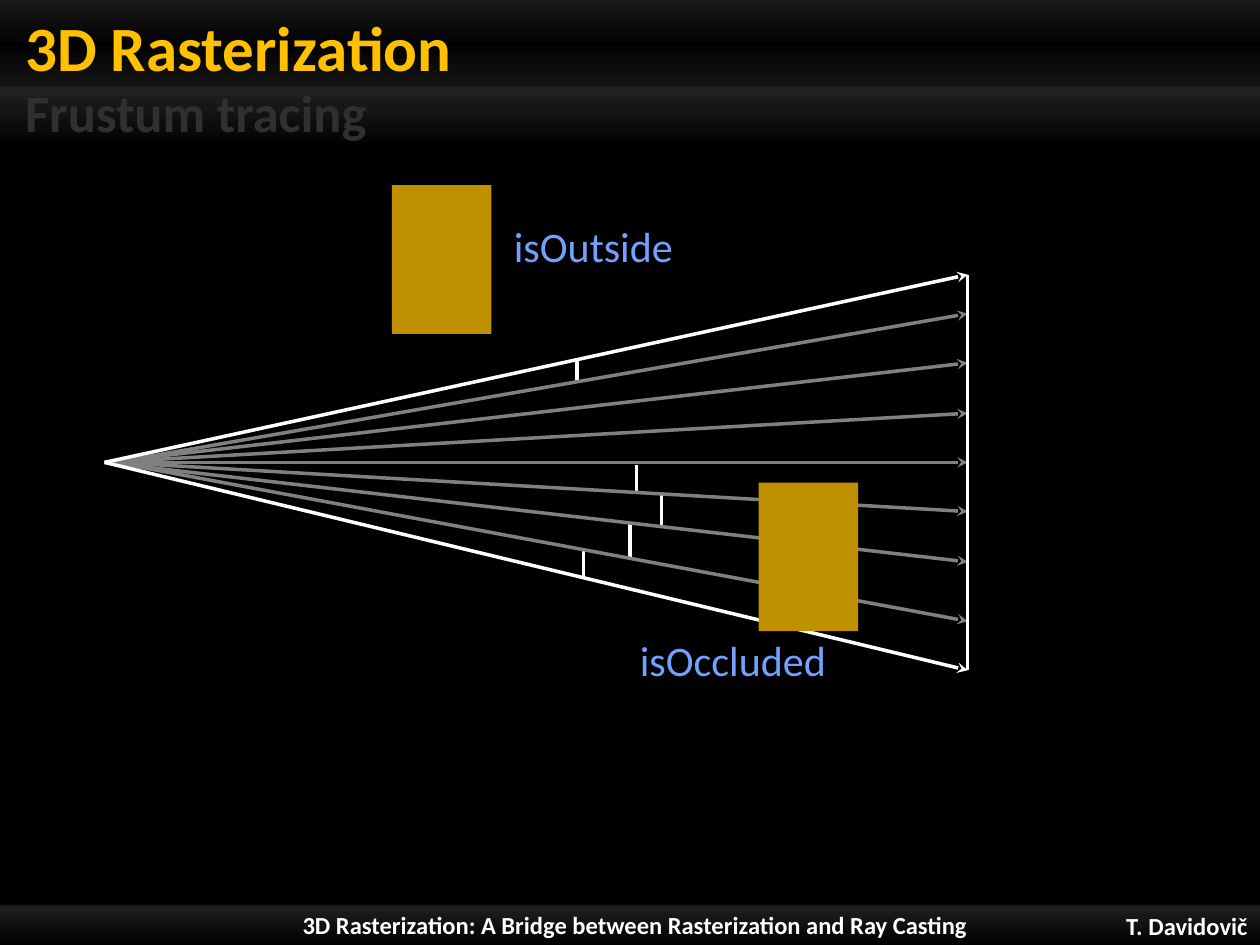
from lxml.etree import SubElement
from pptx import Presentation
from pptx.dml.color import RGBColor
from pptx.enum.shapes import MSO_CONNECTOR, MSO_SHAPE
from pptx.enum.text import MSO_ANCHOR, MSO_AUTO_SIZE, PP_ALIGN
from pptx.oxml.ns import qn
from pptx.util import Inches, Pt

BLACK = RGBColor(0x00, 0x00, 0x00)
WHITE = RGBColor(0xFF, 0xFF, 0xFF)
GRAY = RGBColor(0x80, 0x80, 0x80)
DARK_GRAY = RGBColor(0x30, 0x30, 0x30)
GOLD = RGBColor(0xFF, 0xC0, 0x00)
DARK_GOLD = RGBColor(0xBF, 0x90, 0x00)
BLUE = RGBColor(0x72, 0xA1, 0xFF)

EYE_X, EYE_Y = 0.83, 3.67
PLANE_X, PLANE_TOP, PLANE_BOTTOM = 7.68, 2.18, 5.32


class SlideBuilder:
    font = "Calibri"
    line_width = Pt(2)

    def __init__(self, slide):
        self.slide = slide
        slide.background.fill.solid()
        slide.background.fill.fore_color.rgb = BLACK

    def rect(self, x, y, w, h):
        sp = self.slide.shapes.add_shape(
            MSO_SHAPE.RECTANGLE, Inches(x), Inches(y), Inches(w), Inches(h))
        sp.shadow.inherit = False
        sp.line.fill.background()
        return sp

    def box(self, x, y, w=0.79, h=1.18):
        sp = self.rect(x, y, w, h)
        sp.fill.solid()
        sp.fill.fore_color.rgb = DARK_GOLD

    def band(self, y, h, stops):
        """Full-width white sheen; stops are (position, opacity) in percent."""
        sp = self.rect(0, y, 10, h)
        sp.fill.gradient()
        sp.fill.gradient_angle = 270
        gs_list = sp._element.spPr.find(".//" + qn("a:gsLst"))
        for gs in list(gs_list):
            gs_list.remove(gs)
        for position, opacity in stops:
            gs = SubElement(gs_list, qn("a:gs"), pos=str(position * 1000))
            color = SubElement(gs, qn("a:srgbClr"), val=str(WHITE))
            SubElement(color, qn("a:alpha"), val=str(opacity * 1000))

    def text(self, text, x, y, w, h, size, color, bold=False, wrap=True,
             align=PP_ALIGN.LEFT, anchor=MSO_ANCHOR.TOP, grow=False, left=0.1, top=0.05):
        tb = self.slide.shapes.add_textbox(Inches(x), Inches(y), Inches(w), Inches(h))
        tf = tb.text_frame
        tf.word_wrap = wrap
        tf.auto_size = MSO_AUTO_SIZE.SHAPE_TO_FIT_TEXT if grow else MSO_AUTO_SIZE.NONE
        tf.vertical_anchor = anchor
        tf.margin_left = Inches(left)
        tf.margin_top = tf.margin_bottom = Inches(top)
        tf.text = text
        p = tf.paragraphs[0]
        p.alignment = align
        font = p.runs[0].font
        font.name, font.size, font.bold = self.font, Pt(size), bold
        font.color.rgb = color

    def line(self, x1, y1, x2, y2, color=WHITE, arrow=False):
        cx = self.slide.shapes.add_connector(
            MSO_CONNECTOR.STRAIGHT, Inches(x1), Inches(y1), Inches(x2), Inches(y2))
        cx.line.color.rgb = color
        cx.line.width = self.line_width
        if arrow:
            SubElement(cx.line._get_or_add_ln(), qn("a:tailEnd"), type="stealth")
        SubElement(cx._element.spPr, qn("a:effectLst"))

    def ray(self, y, color, start=EYE_X):
        self.line(start, EYE_Y, PLANE_X, y, color, arrow=True)


def main():
    prs = Presentation()
    prs.slide_width, prs.slide_height = Inches(10), Inches(7.5)
    s = SlideBuilder(prs.slides.add_slide(prs.slide_layouts[6]))

    s.band(7.16, 0.34, [(5, 0), (10, 8), (11, 13), (100, 0)])
    s.band(0, 1.14, [(0, 10), (31, 0), (60, 8), (61, 13), (100, 0)])
    s.text("T. Davidovič", 8.15, 7.19, 1.85, 0.31, 14, WHITE, bold=True,
           align=PP_ALIGN.RIGHT, anchor=MSO_ANCHOR.MIDDLE)
    s.text("3D Rasterization: A Bridge between Rasterization and Ray Casting",
           1.4, 7.17, 7.28, 0.34, 14, WHITE, bold=True, grow=True,
           align=PP_ALIGN.CENTER, anchor=MSO_ANCHOR.MIDDLE)

    # Gaps between neighbouring rays
    for x, top, bottom in [(4.63, 4.37, 4.59), (5, 4.15, 4.43), (5.25, 3.91, 4.18),
                           (5.05, 3.69, 3.91), (4.58, 2.85, 3.03)]:
        s.line(x, top, x, bottom)

    s.text("3D Rasterization", 0, 0, 8.23, 0.67, 36, GOLD, bold=True,
           anchor=MSO_ANCHOR.BOTTOM, left=0.2, top=0)
    s.text("Frustum tracing", 0, 0.65, 7.36, 0.47, 30, DARK_GRAY, bold=True,
           anchor=MSO_ANCHOR.MIDDLE, left=0.2, top=0)

    for y in (2.88, 3.28, EYE_Y, 4.46):
        s.ray(y, GRAY)
    for y in (2.49, 4.06, 4.93):
        s.ray(y, GRAY, start=0.91)
    s.line(PLANE_X, PLANE_TOP, PLANE_X, PLANE_BOTTOM)
    for y in (PLANE_BOTTOM, PLANE_TOP):
        s.ray(y, WHITE)

    s.box(3.11, 1.47)
    s.text("isOutside", 3.98, 1.7, 1.48, 0.5, 24, BLUE, wrap=False, grow=True)
    s.box(6.02, 3.83)
    s.text("isOccluded", 4.98, 4.99, 1.69, 0.5, 24, BLUE, wrap=False, grow=True)

    prs.save("out.pptx")


if __name__ == "__main__":
    main()
